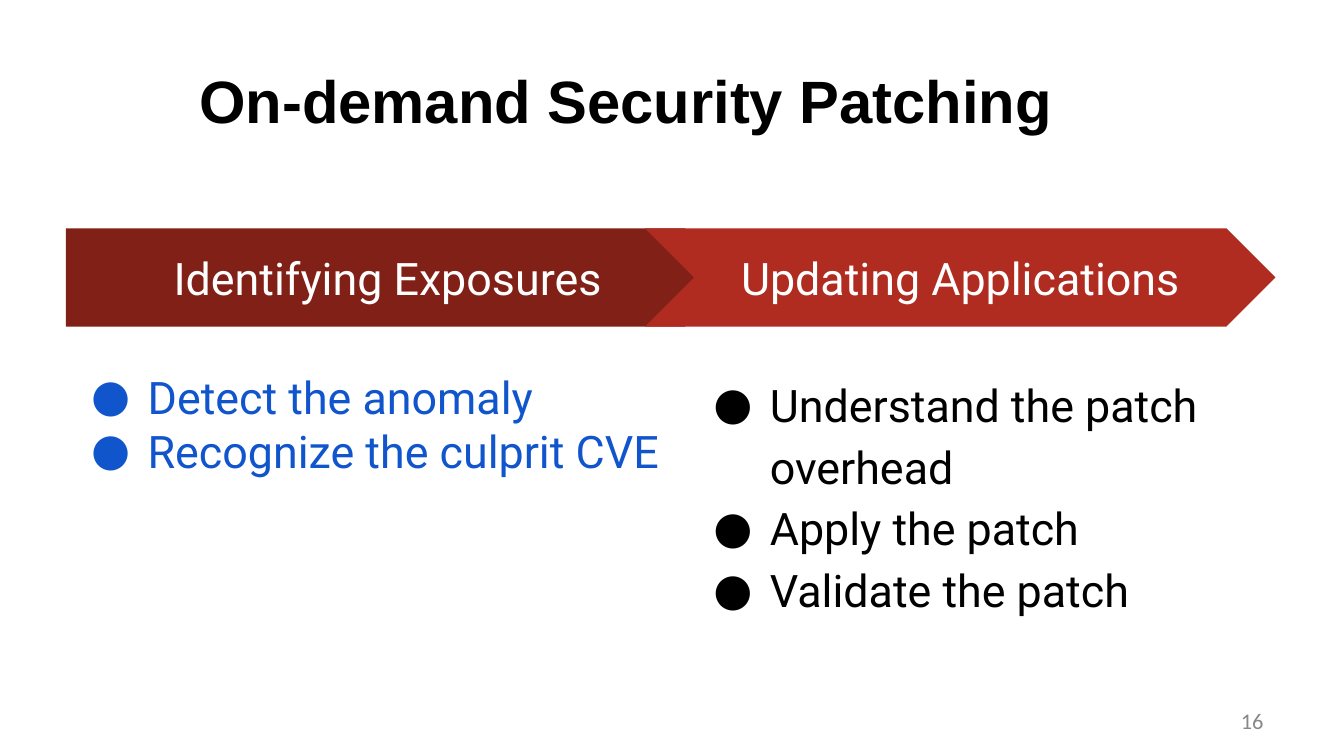
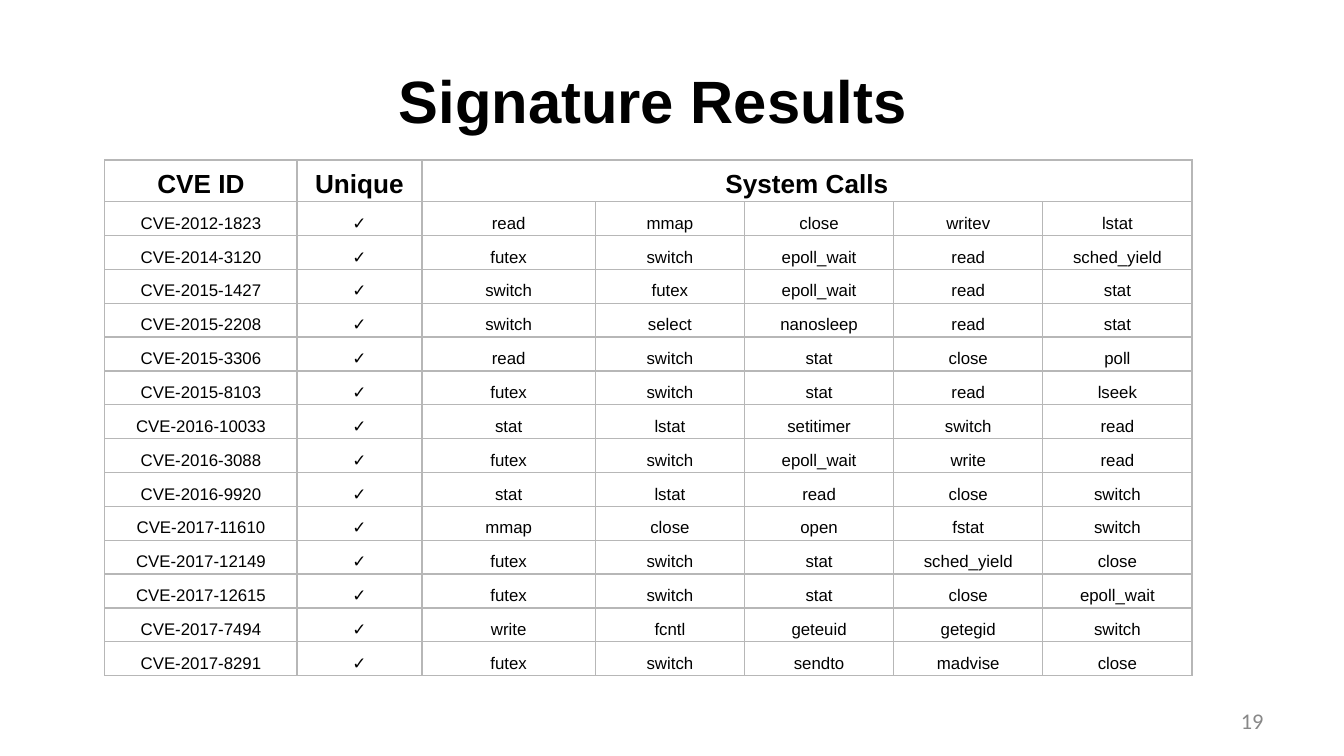
from lxml.etree import SubElement
from pptx import Presentation
from pptx.dml.color import RGBColor
from pptx.enum.shapes import MSO_SHAPE
from pptx.enum.text import MSO_ANCHOR, PP_ALIGN
from pptx.oxml.ns import qn
from pptx.util import Inches, Pt

BLACK, WHITE, GREY, BLUE = "000000", "FFFFFF", "888888", "1155CC"
DARK_RED, RED, BORDER = "802017", "B02C20", "B7B7B7"


def rgb(value):
    return RGBColor.from_string(value)


def write(tf, text, size=24, font="Roboto", color=BLACK, bold=False, align=PP_ALIGN.CENTER,
          anchor=MSO_ANCHOR.MIDDLE, inset=(0.1, 0.1), spacing=None, bullet=None):
    tf.word_wrap = True
    tf.vertical_anchor = anchor
    tf.margin_left = tf.margin_right = Inches(inset[0])
    tf.margin_top = tf.margin_bottom = Inches(inset[1])
    for i, line in enumerate(text.split("\n")):
        p = tf.paragraphs[0] if i == 0 else tf.add_paragraph()
        p.alignment = align
        if bullet:
            pPr = p._p.get_or_add_pPr()
            pPr.set("marL", str(Inches(0.5)))
            pPr.set("indent", str(Inches(-0.42)))
            SubElement(SubElement(pPr, qn("a:buClr")), qn("a:srgbClr"), val=color)
            SubElement(pPr, qn("a:buFont"), typeface=font)
            SubElement(pPr, qn("a:buChar"), char=bullet)
        if spacing:
            p.line_spacing = spacing
        r = p.add_run()
        r.text = line
        r.font.size = Pt(size)
        r.font.name = font
        r.font.bold = bold
        r.font.color.rgb = rgb(color)


prs = Presentation()
prs.slide_width = Inches(10)
prs.slide_height = Inches(10 * 9 / 16)

slides = []
for title, left, number in [("On-demand Security Patching", 0.16, "16"),
                            ("Signature Results", 0.36, "19")]:
    s = prs.slides.add_slide(prs.slide_layouts[6])
    sp = s.shapes.add_textbox(Inches(left), Inches(0.3), Inches(9), Inches(0.88))
    write(sp.text_frame, title, size=32, font="Arial", bold=True)
    sp = s.shapes.add_textbox(Inches(7.17), Inches(5.21), Inches(2.33), Inches(0.3))
    write(sp.text_frame, number, size=12, font="Calibri", color=GREY,
          align=PP_ALIGN.RIGHT, inset=(0.1, 0.05))
    slides.append(s)
patching, results = slides

stages = [
    (MSO_SHAPE.PENTAGON, 0.49, 4.97, DARK_RED, "Identifying Exposures",
     0.5, 4.58, BLUE, None, "Detect the anomaly\nRecognize the culprit CVE"),
    (MSO_SHAPE.CHEVRON, 4.8, 4.69, RED, "Updating Applications",
     5.13, 4.36, BLACK, 1.15, "Understand the patch overhead\nApply the patch\nValidate the patch"),
]
for kind, left, width, fill, label, list_left, list_width, color, spacing, steps in stages:
    sp = patching.shapes.add_shape(kind, Inches(left), Inches(1.7), Inches(width), Inches(0.73))
    sp.adjustments[0] = 0.5
    sp.shadow.inherit = False
    sp.fill.solid()
    sp.fill.fore_color.rgb = rgb(fill)
    sp.line.fill.background()
    write(sp.text_frame, label, color=WHITE)
    sp = patching.shapes.add_textbox(Inches(list_left), Inches(2.65), Inches(list_width), Inches(2.86))
    write(sp.text_frame, steps, color=color, align=PP_ALIGN.LEFT, anchor=MSO_ANCHOR.TOP,
          spacing=spacing, bullet="●")

signatures = [
    ("CVE-2012-1823", "read mmap close writev lstat"),
    ("CVE-2014-3120", "futex switch epoll_wait read sched_yield"),
    ("CVE-2015-1427", "switch futex epoll_wait read stat"),
    ("CVE-2015-2208", "switch select nanosleep read stat"),
    ("CVE-2015-3306", "read switch stat close poll"),
    ("CVE-2015-8103", "futex switch stat read lseek"),
    ("CVE-2016-10033", "stat lstat setitimer switch read"),
    ("CVE-2016-3088", "futex switch epoll_wait write read"),
    ("CVE-2016-9920", "stat lstat read close switch"),
    ("CVE-2017-11610", "mmap close open fstat switch"),
    ("CVE-2017-12149", "futex switch stat sched_yield close"),
    ("CVE-2017-12615", "futex switch stat close epoll_wait"),
    ("CVE-2017-7494", "write fcntl geteuid getegid switch"),
    ("CVE-2017-8291", "futex switch sendto madvise close"),
]
rows = [["CVE ID", "Unique", "System Calls", "", "", "", ""]]
rows += [[cve, "✓", *calls.split()] for cve, calls in signatures]
widths = [1.43, 0.93, 1.29] + [1.11] * 4
height, header_height = 3.84, 0.31

table = results.shapes.add_table(len(rows), len(widths), Inches(0.78), Inches(1.19),
                                 Inches(sum(widths)), Inches(height)).table
table.first_row = table.horz_banding = False
for column, width in zip(table.columns, widths):
    column.width = Inches(width)
for i, row in enumerate(rows):
    header = i == 0
    table.rows[i].height = Inches(header_height if header else (height - header_height) / len(signatures))
    for j, text in enumerate(row):
        cell = table.cell(i, j)
        tcPr = cell._tc.get_or_add_tcPr()
        for side in ("a:lnL", "a:lnR", "a:lnT", "a:lnB"):
            ln = SubElement(tcPr, qn(side), w=str(Pt(0.75)))
            SubElement(SubElement(ln, qn("a:solidFill")), qn("a:srgbClr"), val=BORDER)
        cell.fill.background()
        cell.vertical_anchor = MSO_ANCHOR.BOTTOM
        cell.margin_left = cell.margin_right = Inches(0.03)
        cell.margin_top = cell.margin_bottom = Inches(0.02)
        if text:
            write(cell.text_frame, text, size=14 if header else 9, font="Arial", bold=header,
                  anchor=None, inset=(0.03, 0.02), spacing=None if text == "✓" else 1.15)
table.cell(0, 2).merge(table.cell(0, 6))

prs.save("out.pptx")
